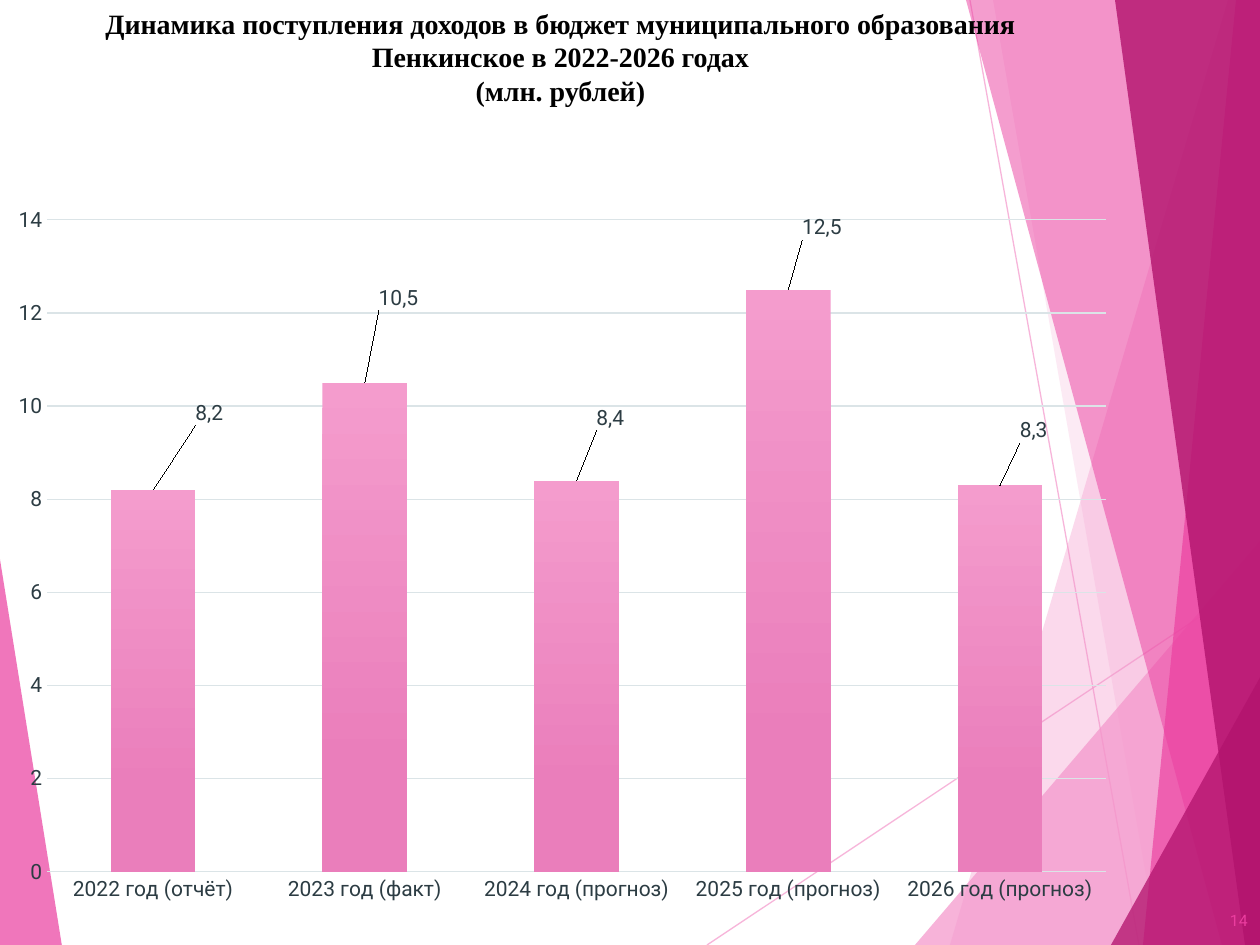
from lxml import etree
from pptx import Presentation
from pptx import util as u
from pptx.chart.data import CategoryChartData
from pptx.dml.color import RGBColor
from pptx.enum import chart as ch, shapes, text
from pptx.oxml import parse_xml
from pptx.oxml.ns import nsdecls, qn

SCALE = 914400 / 126
PINK, ROSE, PLUM = "F496CB", "EB3D9F", "B2136D"
INK, GRID = "2C3C43", "DBE4E7"
RAYS = [((707, 945), (1261, 576)), ((970, 0), (1139, 945))]
SHARDS = [
    (PINK, 36, [(1228, 0), (950, 945), (1262, 946), (1261, 0)]),
    (PINK, 20, [(993, 0), (1158, 945), (1261, 945), (1261, 0)]),
    (PINK, 72, [(915, 945), (1260, 541), (1261, 945)]),
    (ROSE, 50, [(966, 0), (1222, 945), (1261, 945), (1261, 0)]),
    (ROSE, 66, [(1236, 0), (1143, 945), (1261, 945), (1260, 0)]),
    (PLUM, 80, [(1115, 0), (1245, 945), (1262, 945), (1260, 0)]),
    (PLUM, 76, [(1111, 945), (1262, 674), (1262, 945)]),
    (ROSE, 70, [(-1, 553), (62, 946), (-1, 945)]),
]
BARS = [
    ("2022 год (отчёт)", 8.2, 0.05, -0.08),
    ("2023 год (факт)", 10.5, 0.03, -0.09),
    ("2024 год (прогноз)", 8.4, 0.03, -0.06),
    ("2025 год (прогноз)", 12.5, 0.03, -0.06),
    ("2026 год (прогноз)", 8.3, 0.03, -0.05),
]


def px(*vals):
    """Turn pixel lengths into EMU."""
    return [u.Emu(round(v * SCALE)) for v in vals]


def rgb(code):
    """Turn a hex string into a colour."""
    return RGBColor.from_string(code)


def tint(item, code, alpha):
    """Give a shape's fill or line a solid, see-through colour."""
    item.fill.solid()
    item.fill.fore_color.rgb = rgb(code)
    clr = item.fill._xPr.find(".//" + qn("a:srgbClr"))
    etree.SubElement(clr, qn("a:alpha"), val=str(alpha * 1000))


def style(font, face, size, code, bold=False):
    """Set the look of a font."""
    font.name, font.size, font.bold = face, u.Pt(size), bold
    font.color.rgb = rgb(code)


def ray(slide, start, end):
    """Draw a thin see-through line."""
    line = slide.shapes.add_connector(
        shapes.MSO_CONNECTOR.STRAIGHT, *px(*start, *end))
    line.line.width = u.Pt(0.75)
    tint(line.line, PINK, 70)
    etree.SubElement(line.element.spPr, qn("a:effectLst"))


def shard(slide, code, alpha, points):
    """Draw a see-through polygon."""
    path = slide.shapes.build_freeform(*points[0], scale=SCALE)
    path.add_line_segments(points[1:], close=True)
    shape = path.convert_to_shape()
    shape.shadow.inherit = False
    tint(shape, code, alpha)
    shape.line.fill.background()


def head(slide, words):
    """Place the title over the backdrop."""
    title = slide.shapes.title
    title.left, title.top, title.width, title.height = px(15, 0, 1091, 186)
    frame = title.text_frame
    frame.text = words
    frame.word_wrap = True
    frame.auto_size = text.MSO_AUTO_SIZE.NONE
    frame.vertical_anchor = text.MSO_ANCHOR.TOP
    para = frame.paragraphs[0]
    para.alignment = text.PP_ALIGN.CENTER
    style(para.font, "Times New Roman", 16, "000000", True)
    title.element.getparent().append(title.element)


def page(slide, num):
    """Place the page number."""
    frame = slide.shapes.add_textbox(*px(1201, 895, 59, 50)).text_frame
    frame.word_wrap = True
    frame.vertical_anchor = text.MSO_ANCHOR.MIDDLE
    para = frame.paragraphs[0]
    para.text = num
    para.alignment = text.PP_ALIGN.RIGHT
    style(para.font, "Roboto", 9, ROSE)


def layout(owner, index, **parts):
    """Insert a manual chart layout."""
    for old in owner.findall(qn("c:layout")):
        owner.remove(old)
    node = parse_xml(f"<c:layout {nsdecls('c')}><c:manualLayout/></c:layout>")
    for tag, val in parts.items():
        etree.SubElement(node[0], qn("c:" + tag), val=str(val))
    owner.insert(index, node)


def rule(line):
    """Give a chart line its look."""
    line.color.rgb = rgb(GRID)
    line.width = u.Pt(0.75)


def axes(chart):
    """Format both axes."""
    cat, val = chart.category_axis, chart.value_axis
    for axis in (cat, val):
        axis.major_tick_mark = axis.minor_tick_mark = ch.XL_TICK_MARK.NONE
        style(axis.tick_labels.font, "Roboto", 12, INK)
    rule(cat.format.line)
    val.format.line.fill.background()
    rule(val.major_gridlines.format.line)
    val.minimum_scale, val.maximum_scale, val.major_unit = 0, 14, 2
    val.tick_labels.number_format = "0"
    val.tick_labels.number_format_is_linked = False


def label(series):
    """Write and shift the value labels."""
    labels = series.data_labels
    labels.show_value = True
    style(labels.font, "Roboto", 12, INK)
    for idx, (_, val, dx, dy) in enumerate(BARS):
        mark = series.points[idx].data_label
        para = mark.text_frame.paragraphs[0]
        run = para.add_run()
        run.text = str(val).replace(".", ",")
        style(run.font, "Roboto", 12, INK)
        mark.position = ch.XL_LABEL_POSITION.OUTSIDE_END
    for node, (_, _, dx, dy) in zip(labels._element.findall(qn("c:dLbl")), BARS):
        layout(node, 1, x=dx, y=dy)


def graph(slide):
    """Add the column chart."""
    data = CategoryChartData(number_format="0.0")
    data.categories = [bar[0] for bar in BARS]
    data.add_series("Series 1", [bar[1] for bar in BARS])
    chart = slide.shapes.add_chart(
        ch.XL_CHART_TYPE.COLUMN_CLUSTERED, *px(0, 199, 1125, 746), data).chart
    chart.has_title = chart.has_legend = False
    style(chart.font, "Roboto", 10, "000000")
    axes(chart)
    plot = chart.plots[0]
    plot.gap_width, plot.vary_by_categories = 150, False
    series = plot.series[0]
    fill = series.format.fill
    fill.gradient()
    fill.gradient_angle = 270
    for stop, place, code in zip(
            fill.gradient_stops, (0, 0.78), ("F49CCD", "EA7EBB")):
        stop.position, stop.color.rgb = place, rgb(code)
    label(series)
    layout(chart.element.find(".//" + qn("c:plotArea")), 0,
           layoutTarget="inner", xMode="edge", yMode="edge",
           x=0.042, y=0.028, w=0.941, h=0.874)


def main():
    """Build and save the slide."""
    deck = Presentation()
    deck.slide_width, deck.slide_height = px(1260, 945)
    slide = deck.slides.add_slide(deck.slide_layouts[5])
    for start, end in RAYS:
        ray(slide, start, end)
    for item in SHARDS:
        shard(slide, *item)
    head(slide, "Динамика поступления доходов в бюджет муниципального "
                "образования Пенкинское в 2022-2026 годах\v(млн. рублей)")
    graph(slide)
    page(slide, "14")
    deck.save("out.pptx")


if __name__ == "__main__":
    main()
